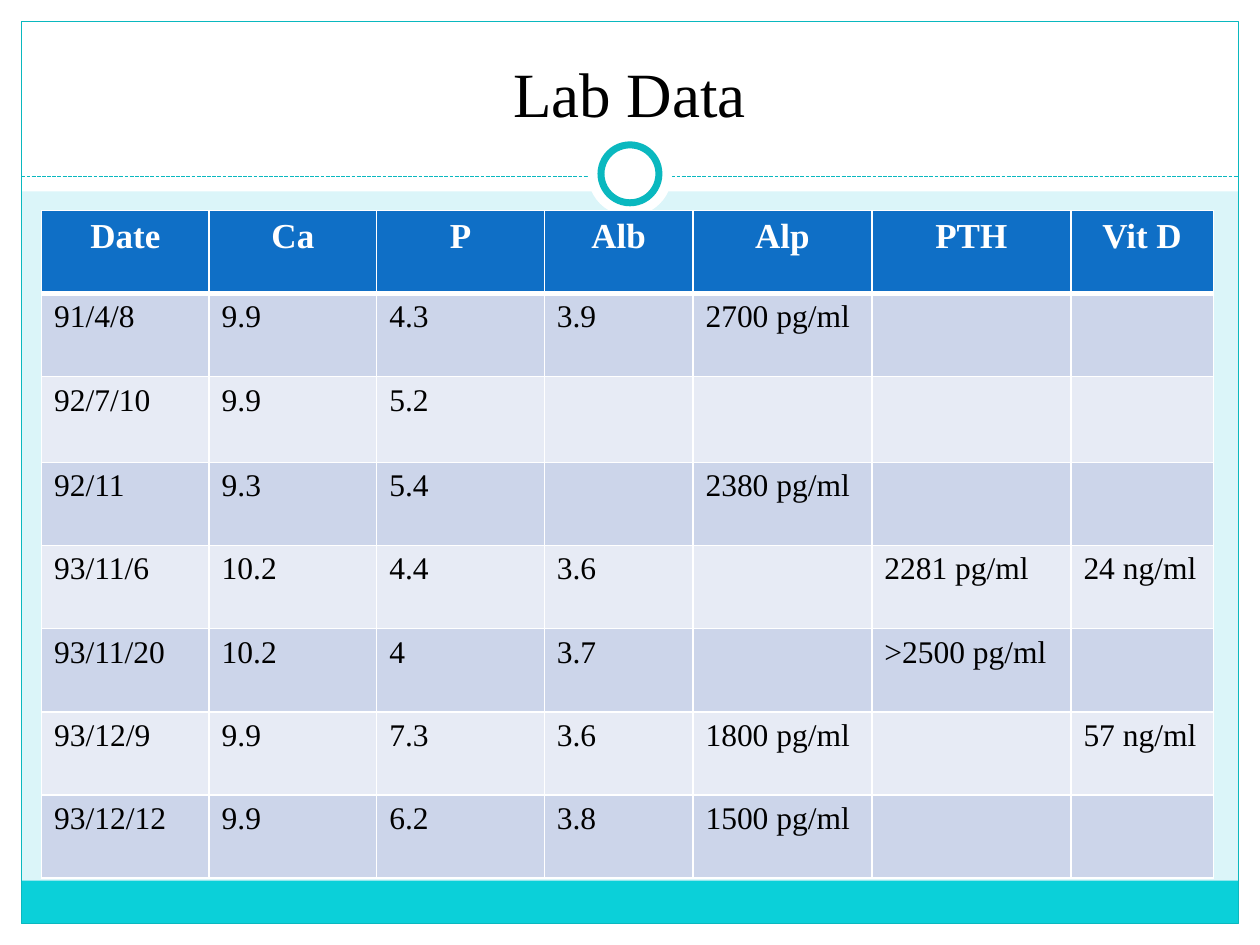
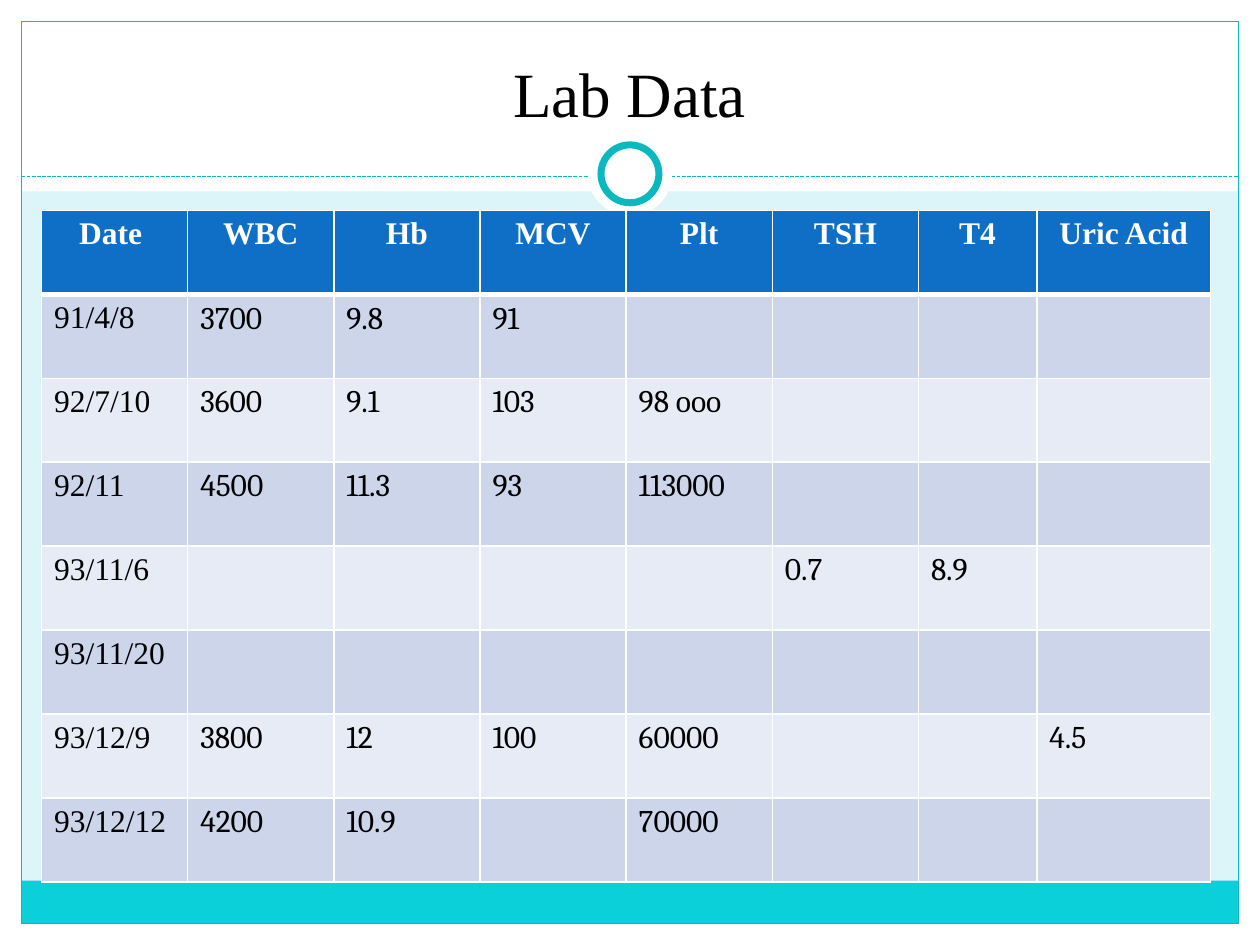
import dataclasses
import pptx
import pptx.util
import pptx.dml.color
import pptx.enum.dml
import pptx.enum.shapes
import pptx.enum.text
import pptx.oxml
import pptx.oxml.ns

Inches = pptx.util.Inches
Pt = pptx.util.Pt
Shape = pptx.enum.shapes.MSO_SHAPE
Align = pptx.enum.text.PP_ALIGN


@dataclasses.dataclass(frozen=True)
class Theme:
    back: str = "DBF5F9"
    white: str = "FFFFFF"
    ink: str = "000000"
    band: str = "0BD0D9"
    edge: str = "0AB8BF"
    head: str = "0F6FC6"
    odd: str = "CCD5EA"
    even: str = "E7EBF5"
    serif: str = "Times New Roman"
    digit: str = "Cambria"
    title: int = 36
    body: int = 18
    thin: float = 0.75
    ring: int = 4
    rule: int = 1
    thick: int = 3


THEME = Theme()
WIDE, HIGH, RIM = 10, 7.5, 0.17
TOP, FOOT, LINE = 1.52, 0.34, 1.4
TITLE_BOX = (0.33, 0.25, 9.33, 0.83)
GRID_AT = (0.33, 1.67)


def tint(name):
    return pptx.dml.color.RGBColor.from_string(name)


def style(para, font, size, color, bold=False, align=Align.LEFT):
    para.alignment = align
    para.font.name = font
    para.font.size = Pt(size)
    para.font.bold = bold
    para.font.color.rgb = tint(color)


def add_part(slide, kind, box, fill=None, line=None, width=THEME.thin):
    part = slide.shapes.add_shape(kind, *map(Inches, box))
    part.shadow.inherit = False
    if fill:
        part.fill.solid()
        part.fill.fore_color.rgb = tint(fill)
    else:
        part.fill.background()
    if line:
        part.line.color.rgb = tint(line)
        part.line.width = Pt(width)
    else:
        part.line.fill.background()


def add_disc(slide, center, size, **look):
    x, y = center
    add_part(slide, Shape.OVAL, (x - size / 2, y - size / 2, size, size), THEME.white, **look)


def add_frame(slide, box):
    x, y, w, h = box
    right, base = x + w, y + h
    slide.background.fill.solid()
    slide.background.fill.fore_color.rgb = tint(THEME.back)
    for edge in (
        (x, base - RIM, w, RIM),
        (x, y, w, TOP),
        (x, y, RIM, h),
        (right - RIM, y, RIM, h),
    ):
        add_part(slide, Shape.RECTANGLE, edge, THEME.white)
    inner = w - 2 * RIM
    add_part(slide, Shape.RECTANGLE, (x + RIM, base - RIM - FOOT, inner, FOOT), THEME.band)
    add_part(slide, Shape.RECTANGLE, (x + RIM, y + RIM, inner, h - 2 * RIM), line=THEME.edge)
    ends = (x + RIM, y + LINE, right - RIM, y + LINE)
    dash = slide.shapes.add_connector(pptx.enum.shapes.MSO_CONNECTOR.STRAIGHT, *map(Inches, ends))
    dash.line.color.rgb = tint(THEME.edge)
    dash.line.width = Pt(THEME.thin)
    dash.line.dash_style = pptx.enum.dml.MSO_LINE.SQUARE_DOT
    dash._element.spPr.append(pptx.oxml.parse_xml(f'<a:effectLst {pptx.oxml.ns.nsdecls("a")}/>'))
    center = (x + w / 2, y + 1.38)
    add_disc(slide, center, 0.67)
    add_disc(slide, center, 0.46, line=THEME.edge, width=THEME.ring)


def add_title(slide, box, text):
    frame = slide.shapes.add_textbox(*map(Inches, box)).text_frame
    frame.word_wrap = True
    frame.vertical_anchor = pptx.enum.text.MSO_ANCHOR.BOTTOM
    para = frame.paragraphs[0]
    para.text = text
    style(para, THEME.serif, THEME.title, THEME.ink, align=Align.CENTER)


def add_rules(cell, row):
    sides = {"L": THEME.rule, "R": THEME.rule, "T": THEME.rule, "B": THEME.rule}
    if row == 0:
        sides["B"] = THEME.thick
    elif row == 1:
        sides["T"] = THEME.thick
    props = cell._tc.get_or_add_tcPr()
    for side, width in sides.items():
        props.append(pptx.oxml.parse_xml(
            f'<a:ln{side} {pptx.oxml.ns.nsdecls("a")} w="{Pt(width)}"><a:solidFill>'
            f'<a:srgbClr val="{THEME.white}"/></a:solidFill></a:ln{side}>'))


def add_grid(slide, spot, cols, rows, lines, head, font):
    box = (*spot, sum(cols), sum(rows))
    grid = slide.shapes.add_table(len(rows), len(cols), *map(Inches, box)).table
    for col, width in zip(grid.columns, cols):
        col.width = Inches(width)
    for r, (high, line) in enumerate(zip(rows, lines)):
        grid.rows[r].height = Inches(high)
        for c, text in enumerate(line.split("|")):
            cell = grid.cell(r, c)
            add_rules(cell, r)
            cell.fill.solid()
            para = cell.text_frame.paragraphs[0]
            para.text = text
            if r == 0:
                fill = THEME.head
                style(para, THEME.serif, head, THEME.white, True, Align.CENTER)
            else:
                fill = THEME.odd if r % 2 else THEME.even
                style(para, font if c else THEME.serif, THEME.body, THEME.ink)
            cell.fill.fore_color.rgb = tint(fill)


def add_lab(deck, **grid):
    slide = deck.slides.add_slide(deck.slide_layouts[6])
    add_frame(slide, (0, 0, WIDE, HIGH))
    add_title(slide, TITLE_BOX, "Lab Data")
    add_grid(slide, GRID_AT, **grid)


BONE = (
    "Date|Ca|P|Alb|Alp|PTH|Vit D",
    "91/4/8|9.9|4.3|3.9|2700 pg/ml||",
    "92/7/10|9.9|5.2||||",
    "92/11|9.3|5.4||2380 pg/ml||",
    "93/11/6|10.2|4.4|3.6||2281 pg/ml|24 ng/ml",
    "93/11/20|10.2|4|3.7||>2500 pg/ml|",
    "93/12/9|9.9|7.3|3.6|1800 pg/ml||57 ng/ml",
    "93/12/12|9.9|6.2|3.8|1500 pg/ml||",
)
BLOOD = (
    "Date |WBC|Hb|MCV|Plt|TSH|T4|Uric Acid",
    "91/4/8|3700|9.8|91||||",
    "92/7/10|3600|9.1|103|98 ooo|||",
    "92/11|4500|11.3|93|113000|||",
    "93/11/6|||||0.7|8.9|",
    "93/11/20|||||||",
    "93/12/9|3800|12|100|60000|||4.5",
    "93/12/12|4200|10.9||70000|||",
)


def main():
    deck = pptx.Presentation()
    deck.slide_width, deck.slide_height = Inches(WIDE), Inches(HIGH)
    add_lab(deck, cols=[1.33] * 3 + [1.18, 1.42, 1.58, 1.13],
            rows=[0.66] * 2 + [0.68] + [0.66] * 5, lines=BONE, head=20, font=THEME.serif)
    add_lab(deck, cols=[1.16] * 6 + [0.94, 1.38],
            rows=[5.33 / 8] * 8, lines=BLOOD, head=18, font=THEME.digit)
    deck.save("out.pptx")


if __name__ == "__main__":
    main()
